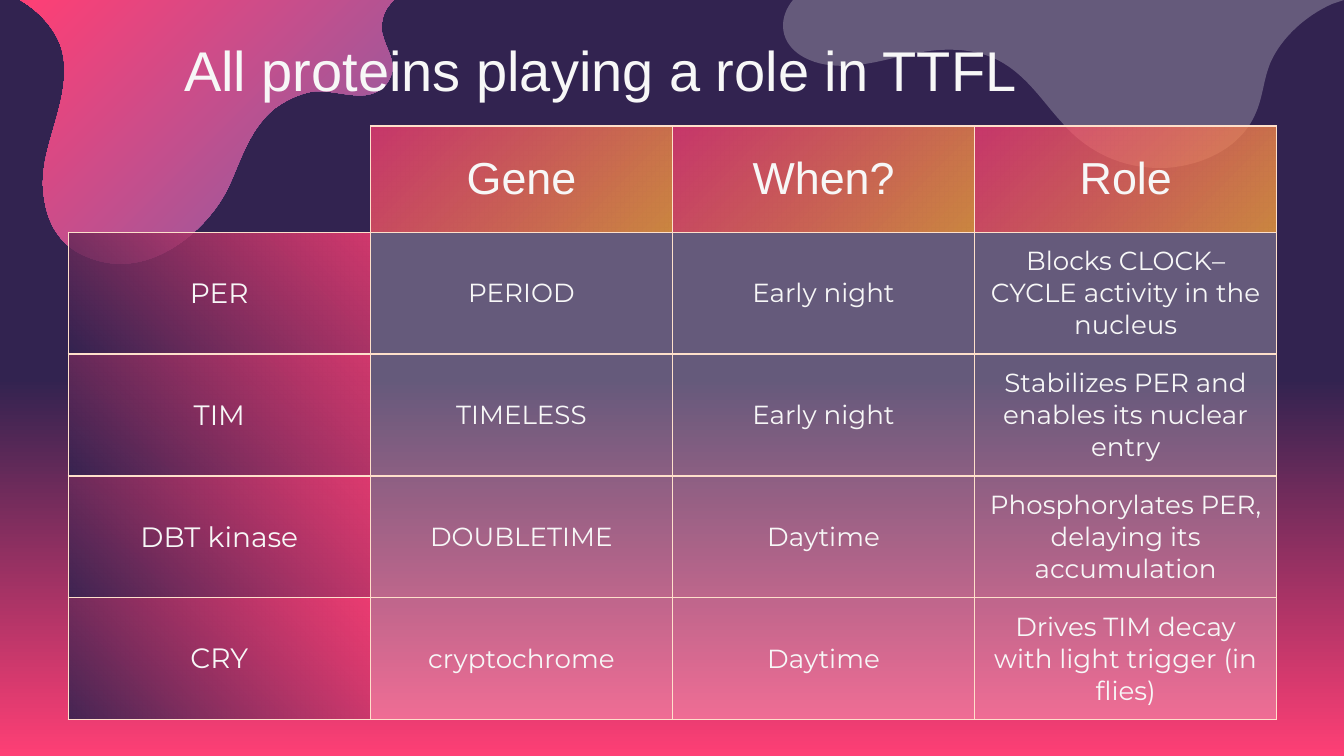
"""Build the slide that tabulates the proteins of the TTFL."""
import dataclasses

import pptx
import pptx.dml.color
import pptx.enum.text
import pptx.oxml
import pptx.oxml.ns
import pptx.util

Cm = pptx.util.Cm
Pt = pptx.util.Pt
qn = pptx.oxml.ns.qn
NAMESPACE = pptx.oxml.ns.nsdecls("a")

NIGHT, PINK, ORANGE, PURPLE = "322350", "FE3F75", "F19F3D", "7D62A9"
WHITE, TEXT, BORDER = "FFFFFF", "F7F7F7", "FEE0CB"
CM_PER_INCH = 2.54


@dataclasses.dataclass(frozen=True)
class Stop:
    position: int
    color: str
    opacity: int = 100


@dataclasses.dataclass(frozen=True)
class Paint:
    stops: tuple[Stop, ...]
    angle: int = 0


@dataclasses.dataclass(frozen=True)
class Blob:
    start: tuple[float, float]
    segments: tuple[tuple[float, ...], ...]
    paint: Paint


@dataclasses.dataclass(frozen=True)
class CellStyle:
    font: str
    size: int
    paint: Paint


@dataclasses.dataclass(frozen=True)
class Protein:
    name: str
    gene: str
    when: str
    role: str


VEIL = Paint((Stop(0, WHITE, 25),))
BACKDROP = Paint((Stop(0, NIGHT), Stop(50, NIGHT), Stop(100, PINK, 78)), 90)
HEADING = CellStyle("Arial", 24, Paint((Stop(0, ORANGE, 80), Stop(100, PINK, 73)), 225))
NAME = CellStyle("Montserrat", 15, Paint((Stop(0, NIGHT, 90), Stop(100, PINK, 78)), 315))
DETAIL = CellStyle("Montserrat", 14, VEIL)

BLOBS = (
    Blob((5.9, 0), (
        (5.8, 0.12, 5.79, 0.29, 5.94, 0.4), (6.04, 0.47, 6.15, 0.49, 6.27, 0.49),
        (6.42, 0.49, 6.57, 0.45, 6.7, 0.42), (6.83, 0.39, 6.94, 0.37, 7.06, 0.37),
        (7.19, 0.37, 7.31, 0.39, 7.43, 0.45), (7.64, 0.56, 7.76, 0.76, 7.9, 0.91),
        (8.07, 1.11, 8.32, 1.25, 8.63, 1.25), (8.64, 1.25, 8.66, 1.25, 8.67, 1.25),
        (8.98, 1.23, 9.24, 1.08, 9.34, 0.85), (9.4, 0.72, 9.4, 0.58, 9.46, 0.45),
        (9.54, 0.28, 9.71, 0.12, 9.91, 0.03), (9.94, 0.02, 9.97, 0.01, 10, 0),
    ), VEIL),
    Blob((0.15, 0), (
        (2.93, 0), (2.87, 0.06, 2.84, 0.12, 2.84, 0.2),
        (2.84, 0.22, 2.84, 0.25, 2.85, 0.27), (2.87, 0.35, 2.92, 0.42, 2.92, 0.5),
        (2.92, 0.52, 2.92, 0.54, 2.91, 0.56), (2.88, 0.65, 2.8, 0.71, 2.68, 0.71),
        (2.56, 0.71, 2.45, 0.67, 2.33, 0.68), (2.22, 0.7, 2.12, 0.75, 2.04, 0.81),
        (1.86, 0.96, 1.8, 1.17, 1.71, 1.37), (1.57, 1.69, 1.15, 2.06, 0.73, 1.94),
        (0.69, 1.93, 0.64, 1.91, 0.6, 1.89), (0.39, 1.78, 0.33, 1.58, 0.32, 1.38),
        (0.32, 1.36), (0.32, 1.22, 0.36, 1.09, 0.4, 0.95),
        (0.44, 0.81, 0.48, 0.67, 0.48, 0.53), (0.48, 0.45, 0.47, 0.37, 0.43, 0.29),
        (0.37, 0.17, 0.27, 0.07, 0.15, 0),
    ), Paint((Stop(0, PURPLE), Stop(100, PINK)), 225)),
)

HEADINGS = ("Gene", "When?", "Role")
PROTEINS = (
    Protein("PER", "PERIOD", "Early night", "Blocks CLOCK–CYCLE activity in the nucleus"),
    Protein("TIM", "TIMELESS", "Early night", "Stabilizes PER and enables its nuclear entry"),
    Protein("DBT kinase", "DOUBLETIME", "Daytime", "Phosphorylates PER, delaying its accumulation"),
    Protein("CRY", "cryptochrome", "Daytime", "Drives TIM decay with light trigger (in flies)"),
)


def rgb(color: str) -> pptx.dml.color.RGBColor:
    """Turn a hex string into a colour."""
    return pptx.dml.color.RGBColor.from_string(color)


def apply_paint(element, fill, paint: Paint) -> None:
    """Give the element a translucent solid or a linear gradient fill."""
    colors = [f'<a:srgbClr val="{stop.color}"><a:alpha val="{stop.opacity * 1000}"/></a:srgbClr>'
              for stop in paint.stops]
    if len(colors) == 1:
        markup = f"<a:solidFill {NAMESPACE}>{colors[0]}</a:solidFill>"
    else:
        stops = "".join(f'<a:gs pos="{stop.position * 1000}">{color}</a:gs>'
                        for stop, color in zip(paint.stops, colors))
        markup = (f'<a:gradFill {NAMESPACE} rotWithShape="1"><a:gsLst>{stops}</a:gsLst>'
                  f'<a:lin ang="{paint.angle * 60000}" scaled="0"/></a:gradFill>')
    fill.background()
    blank = element.find(".//" + qn("a:noFill"))
    blank.getparent().replace(blank, pptx.oxml.parse_xml(markup))


def to_point(x: float, y: float) -> tuple[int, int]:
    """Convert a position in inches to slide units."""
    return Cm(x * CM_PER_INCH), Cm(y * CM_PER_INCH)


def draw_blob(slide, blob: Blob) -> None:
    """Draw one blob, joining each run of three points into a cubic curve."""
    builder = slide.shapes.build_freeform(*to_point(*blob.start))
    builder.add_line_segments([to_point(*pair) for segment in blob.segments
                               for pair in zip(segment[::2], segment[1::2])], close=True)
    shape = builder.convert_to_shape()
    steps = iter(list(shape.element.iter(qn("a:lnTo"))))
    for segment in blob.segments:
        first = next(steps)
        if len(segment) == 2:
            continue
        curve = pptx.oxml.parse_xml(f"<a:cubicBezTo {NAMESPACE}/>")
        first.addprevious(curve)
        for step in (first, next(steps), next(steps)):
            curve.append(step[0])
            step.getparent().remove(step)
    shape.shadow.inherit = False
    shape.line.fill.background()
    apply_paint(shape.element.spPr, shape.fill, blob.paint)


def draw_borders(cell, sides: str) -> None:
    """Line the given sides of a cell and clear the others."""
    properties = cell._tc.get_or_add_tcPr()
    for index, side in enumerate("LRTB"):
        ink = (f'<a:solidFill><a:srgbClr val="{BORDER}"/></a:solidFill>'
               if side in sides else "<a:noFill/>")
        properties.insert(index, pptx.oxml.parse_xml(
            f'<a:ln{side} {NAMESPACE} w="{Pt(0.75)}">{ink}</a:ln{side}>'))


def format_text(paragraph, font: str, size: int) -> None:
    """Set the font, size and colour of a paragraph's runs."""
    for run in paragraph.runs:
        run.font.name = font
        run.font.size = Pt(size)
        run.font.color.rgb = rgb(TEXT)


def fill_cell(cell, text: str, style: CellStyle) -> None:
    """Write and style one table cell."""
    cell.text_frame.text = text
    paragraph = cell.text_frame.paragraphs[0]
    paragraph.alignment = pptx.enum.text.PP_ALIGN.CENTER
    format_text(paragraph, style.font, style.size)
    cell.vertical_anchor = pptx.enum.text.MSO_ANCHOR.MIDDLE
    cell.margin_left = cell.margin_right = cell.margin_top = cell.margin_bottom = Cm(0.25)
    apply_paint(cell._tc, cell.fill, style.paint)
    draw_borders(cell, "LRTB")


def draw_table(slide) -> None:
    """Draw the protein table."""
    heights = [Cm(2.01)] + [Cm(1.73)] * len(PROTEINS)
    columns = len(HEADINGS) + 1
    table = slide.shapes.add_table(len(heights), columns, Cm(1.29), Cm(2.38),
                                   Cm(5.71) * columns, sum(heights)).table
    table.first_row = table.horz_banding = False
    for row, height in zip(table.rows, heights):
        row.height = height
    corner = table.cell(0, 0)
    corner.fill.background()
    draw_borders(corner, "RB")
    for column, heading in enumerate(HEADINGS, 1):
        fill_cell(table.cell(0, column), heading, HEADING)
    for row, protein in enumerate(PROTEINS, 1):
        for column, text in enumerate(dataclasses.astuple(protein)):
            fill_cell(table.cell(row, column), text, DETAIL if column else NAME)


def write_title(slide) -> None:
    """Place the title in front of the blobs."""
    title = slide.shapes.title
    title.left, title.top, title.width, title.height = Cm(3.23), Cm(0.43), Cm(21.41), Cm(1.32)
    frame = title.text_frame
    frame.text = "All proteins playing a role in TTFL"
    frame.word_wrap = True
    frame.auto_size = pptx.enum.text.MSO_AUTO_SIZE.NONE
    frame.vertical_anchor = pptx.enum.text.MSO_ANCHOR.TOP
    frame.margin_left = frame.margin_right = frame.margin_top = frame.margin_bottom = Cm(0.25)
    frame.paragraphs[0].alignment = pptx.enum.text.PP_ALIGN.LEFT
    format_text(frame.paragraphs[0], "Arial", 30)
    title.element.getparent().append(title.element)


def main() -> None:
    """Build and save the presentation."""
    presentation = pptx.Presentation()
    presentation.slide_width, presentation.slide_height = Cm(25.4), Cm(14.29)
    slide = presentation.slides.add_slide(presentation.slide_layouts[5])
    apply_paint(slide.element, slide.background.fill, BACKDROP)
    for blob in BLOBS:
        draw_blob(slide, blob)
    write_title(slide)
    draw_table(slide)
    presentation.save("out.pptx")


if __name__ == "__main__":
    main()
